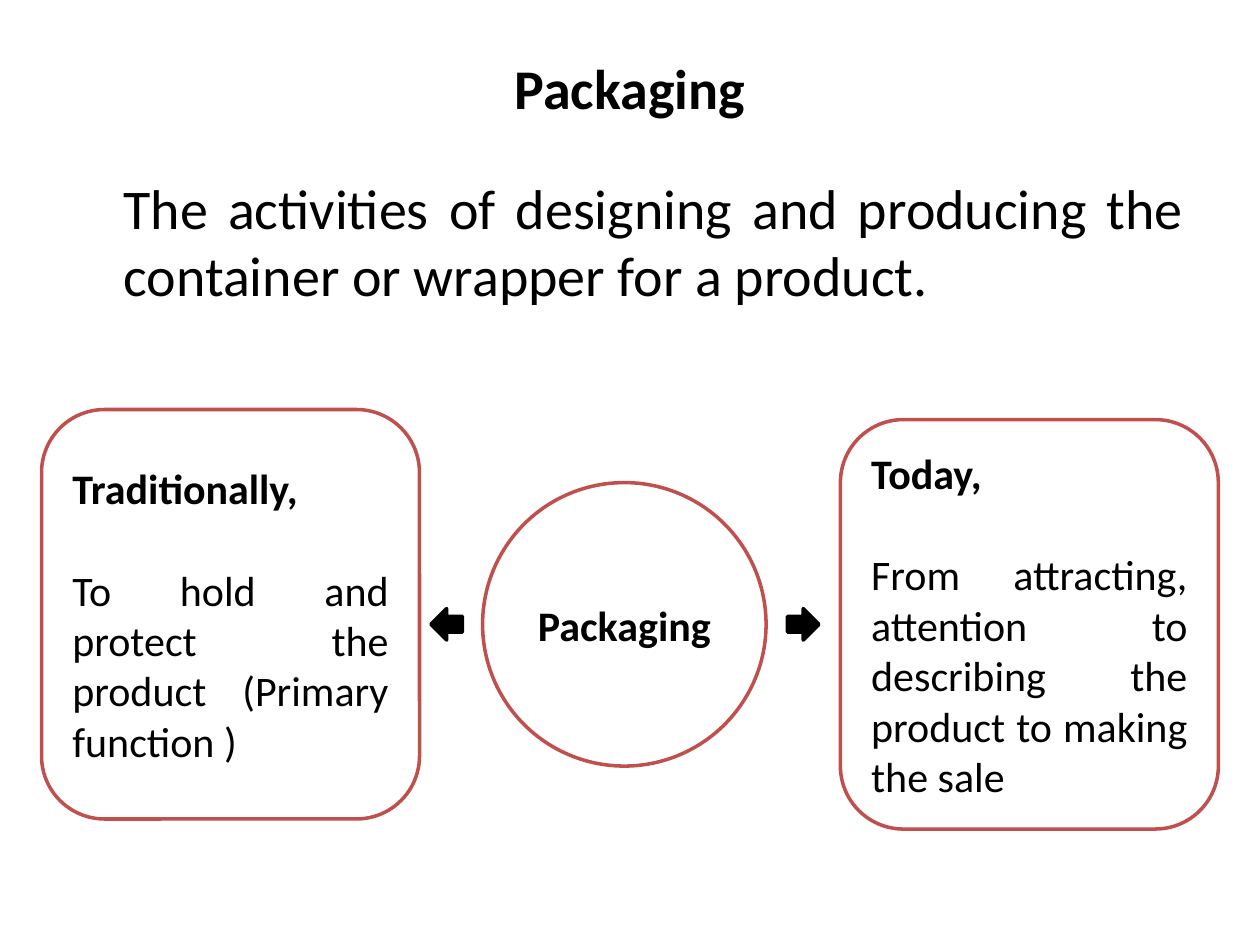
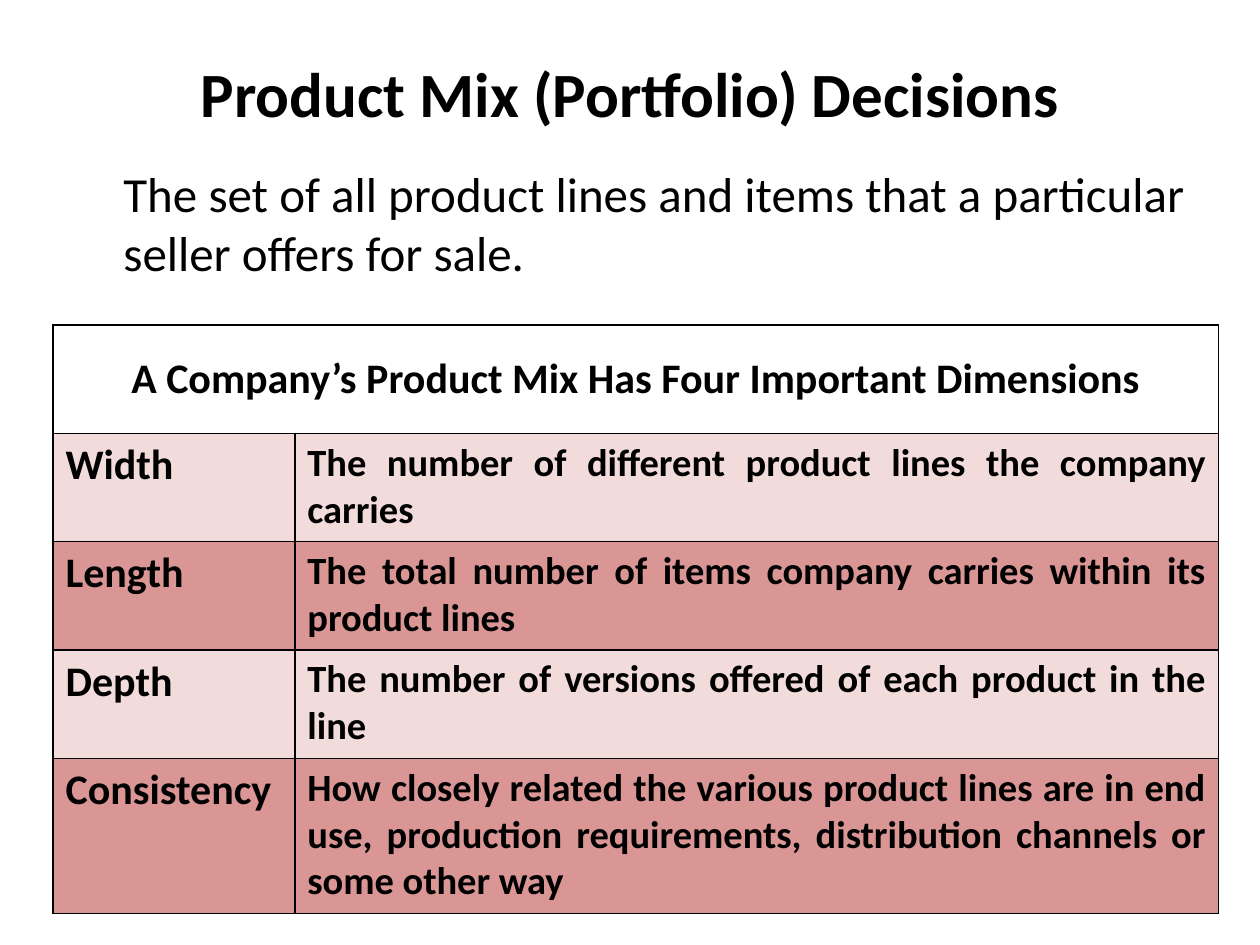
from lxml import etree
from pptx import Presentation
from pptx.dml.color import RGBColor
from pptx.enum.shapes import MSO_SHAPE
from pptx.enum.text import MSO_ANCHOR, PP_ALIGN
from pptx.oxml.ns import qn
from pptx.util import Inches, Pt

LEFT, CENTER, JUSTIFY = PP_ALIGN.LEFT, PP_ALIGN.CENTER, PP_ALIGN.JUSTIFY
MIDDLE, TOP = MSO_ANCHOR.MIDDLE, MSO_ANCHOR.TOP
ROUNDED, OVAL = MSO_SHAPE.ROUNDED_RECTANGLE, MSO_SHAPE.OVAL
LEFT_ARROW, RIGHT_ARROW = MSO_SHAPE.LEFT_ARROW, MSO_SHAPE.RIGHT_ARROW

FONT = "Calibri"
COLORS = {"ink": "000000", "paper": "FFFFFF", "outline": "C0504D",
          "light row": "F2DCDB", "dark row": "D99694"}

PACKAGING = {
    "title": ("Packaging", 32, 0.78),
    "definition": ("The activities of designing and producing the container "
                   "or wrapper for a product.", 32, 1.33, 1.42),
    "hub": "Packaging",
    "purposes": [
        ("Traditionally,", "To hold and protect the product (Primary function )", 0.33, 3.25),
        ("Today,", "From attracting, attention to describing the product "
                   "to making the sale", 6.67, 3.33),
    ],
    "arrows": [(LEFT_ARROW, 3.42), (RIGHT_ARROW, 6.25)],
}
PRODUCT_MIX = {
    "title": ("Product Mix (Portfolio) Decisions", 36, 0.87),
    "definition": ("The set of all product lines and items that a particular "
                   "seller offers for sale.", 28, 1.25, 1.17),
    "heading": "A Company’s Product Mix Has Four Important Dimensions",
    "dimensions": [
        ("Width", "The number of different product lines the company carries"),
        ("Length", "The total number of items company carries within its product lines"),
        ("Depth", "The number of versions offered of each product in the line"),
        ("Consistency", "How closely related the various product lines are in end use, "
                        "production requirements, distribution channels or some other way"),
    ],
    "column widths": (1.92, 7.33),
    "row heights": (0.86, 0.86, 0.86, 0.86, 1.23),
}


def color(name):
    return RGBColor.from_string(COLORS[name])


def box(left, top, width, height):
    return [Inches(length) for length in (left, top, width, height)]


def style(paragraph, size, alignment, bold=False):
    paragraph.alignment = alignment
    for run in paragraph.runs:
        run.font.name = FONT
        run.font.size = Pt(size)
        run.font.bold = bold
        run.font.color.rgb = color("ink")


def add_headed_slide(presentation, content):
    """Add a slide with its title and the definition below it."""
    slide = presentation.slides.add_slide(presentation.slide_layouts[5])
    text, size, height = content["title"]
    title = slide.shapes.title
    title.left, title.top, title.width, title.height = box(0.5, 0.3, 9, height)
    title.text_frame.text = text
    title.text_frame.vertical_anchor = MIDDLE
    style(title.text_frame.paragraphs[0], size, CENTER, True)

    text, size, top, height = content["definition"]
    frame = slide.shapes.add_textbox(*box(0.5, top, 9, height)).text_frame
    frame.word_wrap = True
    frame.margin_left = Inches(0.48)
    frame.text = text
    style(frame.paragraphs[0], size, JUSTIFY)
    return slide


def add_outlined_shape(slide, kind, place, fill="paper", line="outline"):
    shape = slide.shapes.add_shape(kind, *box(*place))
    shape.shadow.inherit = False
    shape.fill.solid()
    shape.fill.fore_color.rgb = color(fill)
    shape.line.color.rgb = color(line)
    shape.line.width = Pt(2)
    shape.text_frame.vertical_anchor = MIDDLE
    return shape


def build_packaging(presentation):
    slide = add_headed_slide(presentation, PACKAGING)
    hub = add_outlined_shape(slide, OVAL, (3.83, 3.83, 2.25, 2.25))
    hub.text_frame.text = PACKAGING["hub"]
    style(hub.text_frame.paragraphs[0], 24, CENTER, True)
    for kind, left in PACKAGING["arrows"]:
        add_outlined_shape(slide, kind, (left, 4.83, 0.25, 0.25), "ink", "ink")
    for heading, purpose, left, top in PACKAGING["purposes"]:
        frame = add_outlined_shape(slide, ROUNDED, (left, top, 3, 3.25)).text_frame
        frame.text = f"{heading}\n{purpose}"
        first, second = frame.paragraphs
        style(first, 24, JUSTIFY, True)
        style(second, 24, JUSTIFY)
        second.space_before = Pt(29)


def add_borders(cell):
    properties = cell._tc.get_or_add_tcPr()
    for side in ("a:lnL", "a:lnR", "a:lnT", "a:lnB"):
        line = etree.SubElement(properties, qn(side), w=str(Pt(1)))
        fill = etree.SubElement(line, qn("a:solidFill"))
        etree.SubElement(fill, qn("a:srgbClr"), val=COLORS["ink"])


def fill_cell(cell, text, size, alignment, fill, anchor=TOP):
    cell.text_frame.text = text
    cell.vertical_anchor = anchor
    style(cell.text_frame.paragraphs[0], size, alignment, True)
    cell.fill.solid()
    cell.fill.fore_color.rgb = color(fill)


def build_product_mix(presentation):
    slide = add_headed_slide(presentation, PRODUCT_MIX)
    widths, heights = PRODUCT_MIX["column widths"], PRODUCT_MIX["row heights"]
    place = box(0.42, 2.58, sum(widths), sum(heights))
    table = slide.shapes.add_table(len(heights), len(widths), *place).table
    for column, width in zip(table.columns, widths):
        column.width = Inches(width)
    for row, height in zip(table.rows, heights):
        row.height = Inches(height)
    for cell in table.iter_cells():
        add_borders(cell)

    table.cell(0, 0).merge(table.cell(0, 1))
    fill_cell(table.cell(0, 0), PRODUCT_MIX["heading"], 24, CENTER, "paper", MIDDLE)
    for row, (name, meaning) in enumerate(PRODUCT_MIX["dimensions"], start=1):
        fill = "light row" if row % 2 else "dark row"
        fill_cell(table.cell(row, 0), name, 24, LEFT, fill)
        fill_cell(table.cell(row, 1), meaning, 22, JUSTIFY, fill)


def main():
    presentation = Presentation()
    presentation.slide_width, presentation.slide_height = Inches(10), Inches(7.5)
    build_packaging(presentation)
    build_product_mix(presentation)
    presentation.save("out.pptx")


if __name__ == "__main__":
    main()
